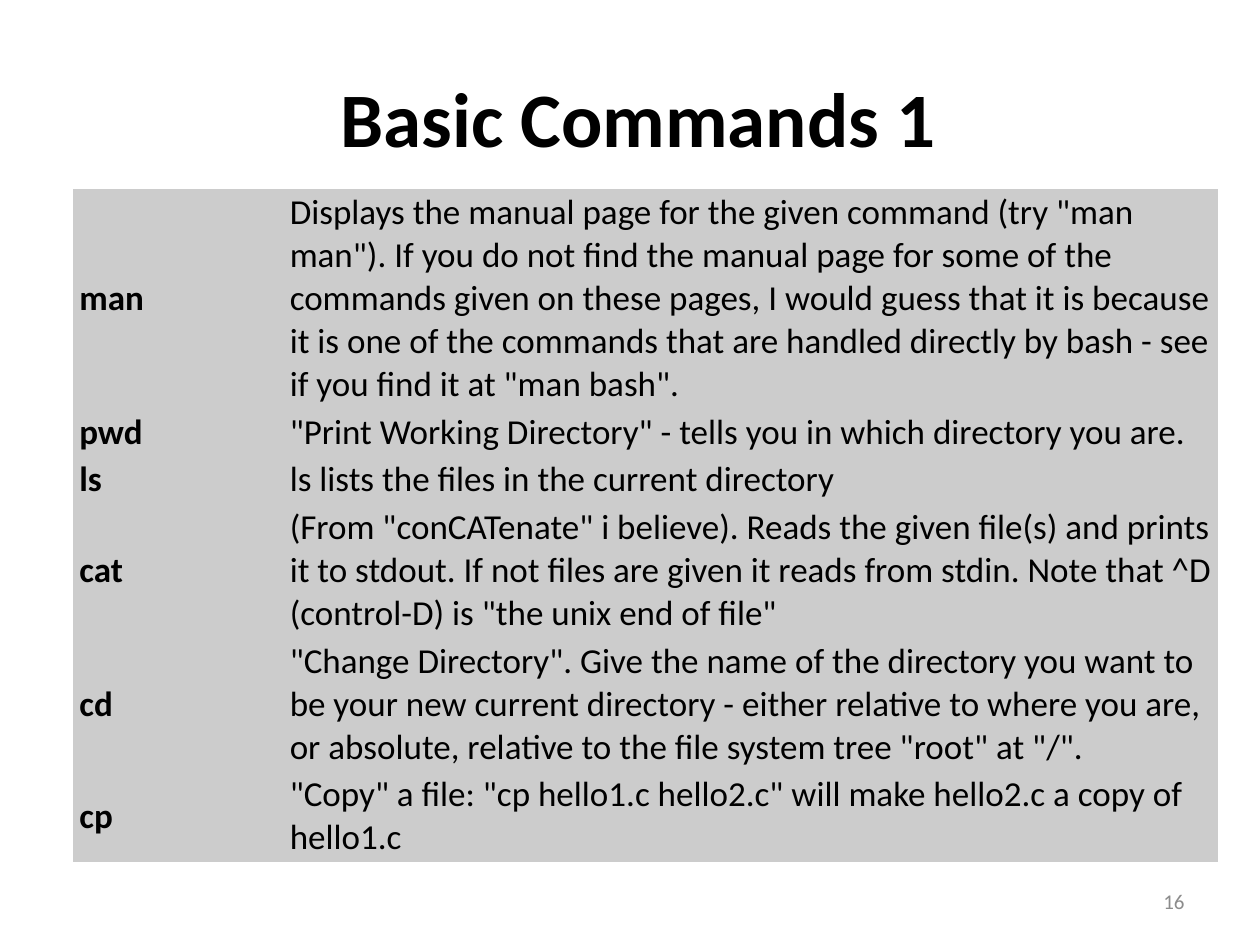
from pptx import Presentation
from pptx.dml.color import RGBColor
from pptx.enum.text import MSO_ANCHOR, PP_ALIGN
from pptx.oxml.ns import qn
from pptx.util import Inches, Pt

NO_STYLE = "{2D5ABB26-0587-4C30-8999-92F81FD0307C}"
COMMANDS = [
    ("man", 5, 'Displays the manual page for the given command (try "man man"). '
     "If you do not find the manual page for some of the commands given on these "
     "pages, I would guess that it is because it is one of the commands that are "
     'handled directly by bash - see if you find it at "man bash".'),
    ("pwd", 1, '"Print Working Directory" - tells you in which directory you are.'),
    ("ls", 1, "ls lists the files in the current directory"),
    ("cat", 3, '(From "conCATenate" i believe). Reads the given file(s) and prints '
     "it to stdout. If not files are given it reads from stdin. Note that ^D "
     '(control-D) is "the unix end of file"'),
    ("cd", 3, '"Change Directory". Give the name of the directory you want to be '
     "your new current directory - either relative to where you are, or absolute, "
     'relative to the file system tree "root" at "/".'),
    ("cp", 2, '"Copy" a file: "cp hello1.c hello2.c" will make hello2.c a copy of '
     "hello1.c"),
]


def color(value):
    return RGBColor.from_string(value)


def add_run(tf, text, size, value="000000", bold=False, align=PP_ALIGN.LEFT):
    p = tf.paragraphs[0]
    p.alignment = align
    r = p.add_run()
    r.text = text
    r.font.name = "Calibri"
    r.font.size = Pt(size)
    r.font.bold = bold
    r.font.color.rgb = color(value)


def add_title(s, text):
    sp = s.shapes.title
    sp.left, sp.top = Inches(0.5), Inches(0.3)
    sp.width, sp.height = Inches(9), Inches(1.25)
    sp.text_frame.vertical_anchor = MSO_ANCHOR.MIDDLE
    add_run(sp.text_frame, text, 44, bold=True, align=PP_ALIGN.CENTER)


def add_page_number(s, text):
    sp = s.shapes.add_textbox(Inches(7.17), Inches(6.95), Inches(2.33), Inches(0.4))
    tf = sp.text_frame
    tf.word_wrap = True
    tf.vertical_anchor = MSO_ANCHOR.MIDDLE
    add_run(tf, text, 12, "8C8C8C", align=PP_ALIGN.RIGHT)


def fill_cell(cell, text, bold):
    cell.fill.solid()
    cell.fill.fore_color.rgb = color("CCCCCC")
    cell.vertical_anchor = MSO_ANCHOR.MIDDLE
    cell.margin_left = cell.margin_right = Inches(0.05)
    cell.margin_top = cell.margin_bottom = Inches(0.02)
    add_run(cell.text_frame, text, 20, bold=bold)


def add_command_table(s, commands):
    frame = s.shapes.add_table(len(commands), 2, Inches(0.58), Inches(1.5),
                               Inches(9.08), Inches(5.29))
    table = frame.table
    table.first_row = table.horz_banding = False
    frame._element.find(".//" + qn("a:tableStyleId")).text = NO_STYLE
    for column, width in zip(table.columns, (1.67, 7.42)):
        column.width = Inches(width)
    for i, (name, lines, description) in enumerate(commands):
        table.rows[i].height = Inches(0.34 * lines + 0.04)
        fill_cell(table.cell(i, 0), name, True)
        fill_cell(table.cell(i, 1), description, False)


def main():
    prs = Presentation()
    prs.slide_width, prs.slide_height = Inches(10), Inches(7.5)
    s = prs.slides.add_slide(prs.slide_layouts[5])
    add_title(s, " Basic Commands 1")
    add_page_number(s, "16")
    add_command_table(s, COMMANDS)
    prs.save("out.pptx")


if __name__ == "__main__":
    main()
